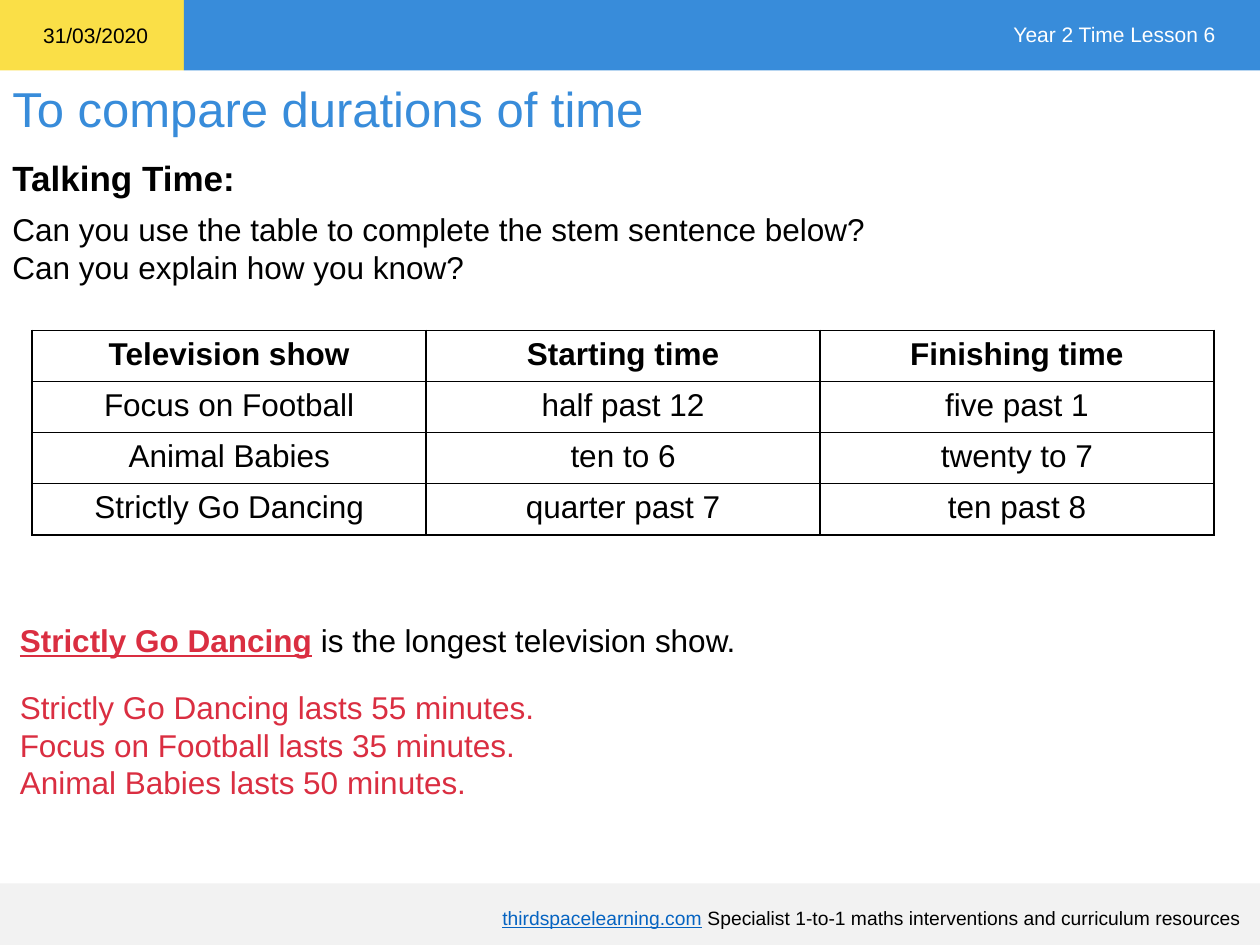
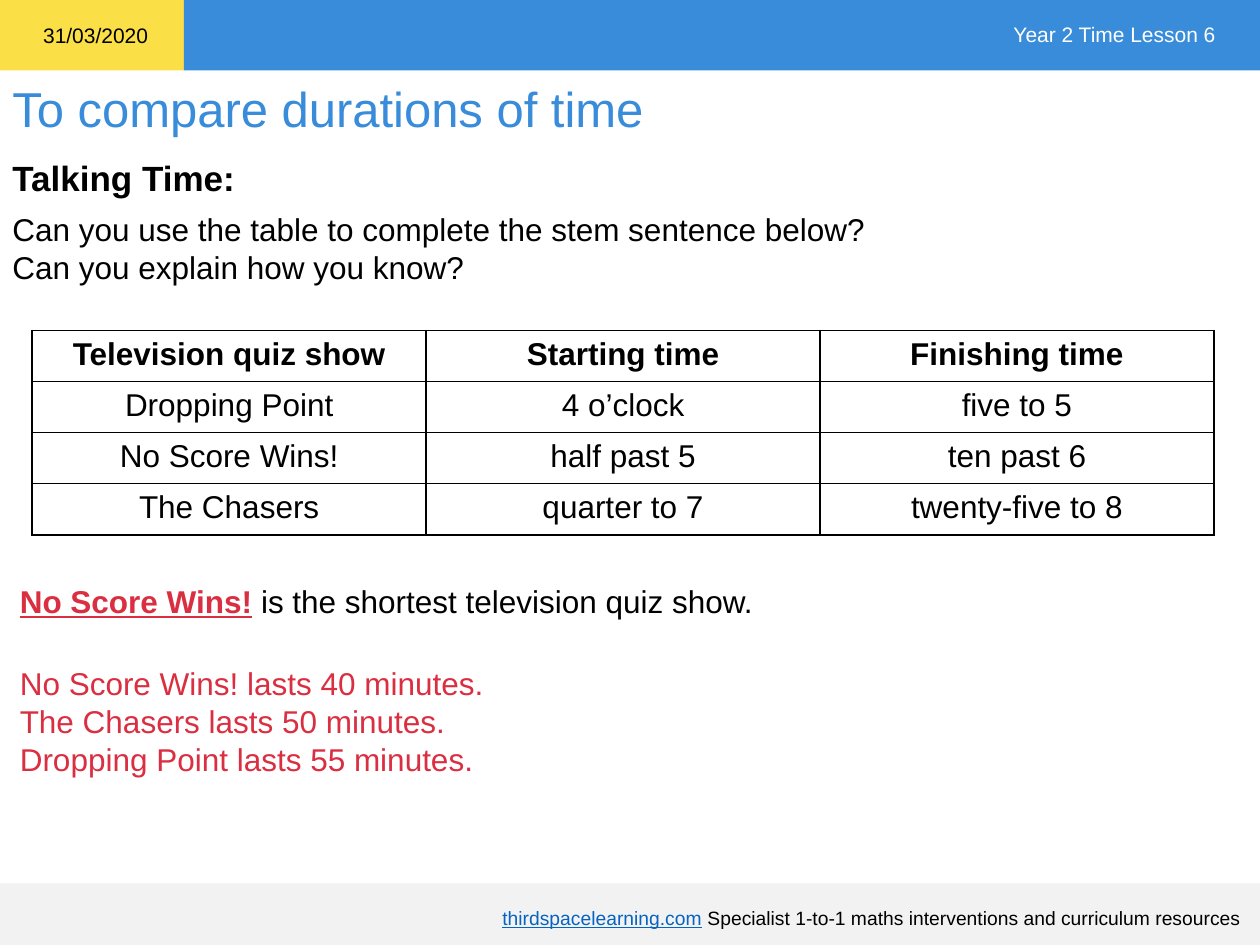
from lxml import etree
from pptx import Presentation
from pptx.dml.color import RGBColor
from pptx.enum.shapes import MSO_SHAPE
from pptx.enum.text import MSO_ANCHOR, PP_ALIGN
from pptx.oxml.ns import qn
from pptx.util import Cm, Pt

RECT = MSO_SHAPE.RECTANGLE
MID, TOP = MSO_ANCHOR.MIDDLE, MSO_ANCHOR.TOP
LEFT, RIGHT, MIDDLE = PP_ALIGN.LEFT, PP_ALIGN.RIGHT, PP_ALIGN.CENTER

YELLOW = RGBColor(0xFA, 0xDF, 0x47)
BLUE = RGBColor(0x38, 0x8C, 0xDA)
GREY = RGBColor(0xF2, 0xF2, 0xF2)
LINK = RGBColor(0x05, 0x63, 0xC1)
RED = RGBColor(0xDA, 0x2E, 0x41)
BLACK = RGBColor(0, 0, 0)
WHITE = RGBColor(0xFF, 0xFF, 0xFF)

DATE = "31/03/2020"
LESSON = "Year 2 Time Lesson 6"
TITLE = "To compare durations of time"
TASK = "Talking Time:"
ASK = ["Can you use the table to complete the stem sentence below?",
       "Can you explain how you know?"]
SITE = "thirdspacelearning.com"
CLAIM = " Specialist 1-to-1 maths interventions and curriculum resources"
TIMES = ["Starting time", "Finishing time"]

PAGES = [
    {"head": "Television show",
     "shows": [("Focus on Football", "half past 12", "five past 1"),
               ("Animal Babies", "ten to 6", "twenty to 7"),
               ("Strictly Go Dancing", "quarter past 7", "ten past 8")],
     "stem": ("Strictly Go Dancing", " is the longest television show."),
     "proof": ["Strictly Go Dancing lasts 55 minutes.",
               "Focus on Football lasts 35 minutes.",
               "Animal Babies lasts 50 minutes."],
     "tops": (12.4, 13.74)},
    {"head": "Television quiz show",
     "shows": [("Dropping Point", "4 o’clock", "five to 5"),
               ("No Score Wins!", "half past 5", "ten past 6"),
               ("The Chasers", "quarter to 7", "twenty-five to 8")],
     "stem": ("No Score Wins!", " is the shortest television quiz show."),
     "proof": ["No Score Wins! lasts 40 minutes.",
               "The Chasers lasts 50 minutes.",
               "Dropping Point lasts 55 minutes."],
     "tops": (11.61, 13.26)},
]

WIDE, HIGH = 25.4, 19.05
BAND, SPLIT, FOOT = 1.42, 3.71, 17.81
GRID = (0.65, 6.66, 23.82, 4.12)

BODY = {"name": "Arial", "size": Pt(18), "bold": False, "underline": False}
BOLD = {**BODY, "bold": True}
KEY = {**BOLD, "underline": True}
SMALL = {**BODY, "size": Pt(12)}
NOTE = {**BODY, "size": Pt(11)}
WEB = {**NOTE, "underline": True}
LARGE = {**BODY, "size": Pt(28)}
LEAD = {**BOLD, "size": Pt(20)}


def add_run(para, text, form, color):
    run = para.add_run()
    run.text = text
    for name, value in form.items():
        setattr(run.font, name, value)
    run.font.color.rgb = color


def add_text(slide, area, lines, align=LEFT, wrap=True, anchor=TOP):
    frame = slide.shapes.add_textbox(*map(Cm, area)).text_frame
    frame.word_wrap = wrap
    frame.vertical_anchor = anchor
    for i, runs in enumerate(lines):
        para = frame.add_paragraph() if i else frame.paragraphs[0]
        para.alignment = align
        for run in runs:
            add_run(para, *run)
    return frame


def add_band(slide, area, color):
    band = slide.shapes.add_shape(RECT, *map(Cm, area))
    band.shadow.inherit = False
    band.fill.solid()
    band.fill.fore_color.rgb = color
    band.line.fill.background()


def add_frame(slide):
    add_band(slide, (0, 0, SPLIT, BAND), YELLOW)
    add_band(slide, (SPLIT, 0, WIDE - SPLIT, BAND), BLUE)
    add_band(slide, (0, FOOT, WIDE, HIGH - FOOT), GREY)
    add_text(slide, (1.07, 18.1, 24.2, 0.8),
             [[(SITE, WEB, LINK), (CLAIM, NOTE, BLACK)]], RIGHT, anchor=MID)
    add_text(slide, (0, 1.45, 24.82, 1.45), [[(TITLE, LARGE, BLUE)]])
    add_text(slide, (0.62, 0.33, 2.64, 0.76),
             [[(DATE, SMALL, BLACK)]], wrap=False)
    add_text(slide, (20.14, 0.31, 4.62, 0.76),
             [[(LESSON, SMALL, WHITE)]], RIGHT, wrap=False)


def add_edges(cell):
    props = cell._tc.get_or_add_tcPr()
    for side in ("a:lnL", "a:lnR", "a:lnT", "a:lnB"):
        line = etree.SubElement(props, qn(side), w=str(Pt(1)))
        fill = etree.SubElement(line, qn("a:solidFill"))
        etree.SubElement(fill, qn("a:srgbClr"), val=str(BLACK))


def add_grid(slide, rows):
    table = slide.shapes.add_table(
        len(rows), len(rows[0]), *map(Cm, GRID)).table
    table.first_row = table.horz_banding = False
    for r, row in enumerate(rows):
        for c, text in enumerate(row):
            cell = table.cell(r, c)
            add_edges(cell)
            cell.fill.solid()
            cell.fill.fore_color.rgb = WHITE
            para = cell.text_frame.paragraphs[0]
            para.alignment = MIDDLE
            add_run(para, text, BODY if r else BOLD, BLACK)


def add_page(deck, page):
    slide = deck.slides.add_slide(deck.slide_layouts[6])
    add_frame(slide)
    task = add_text(slide, (0, 2.97, 5.03, 1.12),
                    [[(TASK, LEAD, BLACK)]], wrap=False)
    task.paragraphs[0].line_spacing = 1.07
    add_text(slide, (0, 4.11, 23.82, 1.8),
             [[(line, BODY, BLACK)] for line in ASK])
    add_grid(slide, [[page["head"], *TIMES], *page["shows"]])
    name, rest = page["stem"]
    stem, proof = page["tops"]
    add_text(slide, (0.15, stem, 23.5, 1.02),
             [[(name, KEY, RED), (rest, BODY, BLACK)]])
    add_text(slide, (0.15, proof, 14.5, 2.57),
             [[(line, BODY, RED)] for line in page["proof"]])


def main():
    deck = Presentation()
    deck.slide_width, deck.slide_height = Cm(WIDE), Cm(HIGH)
    for page in PAGES:
        add_page(deck, page)
    deck.save("out.pptx")


if __name__ == "__main__":
    main()
